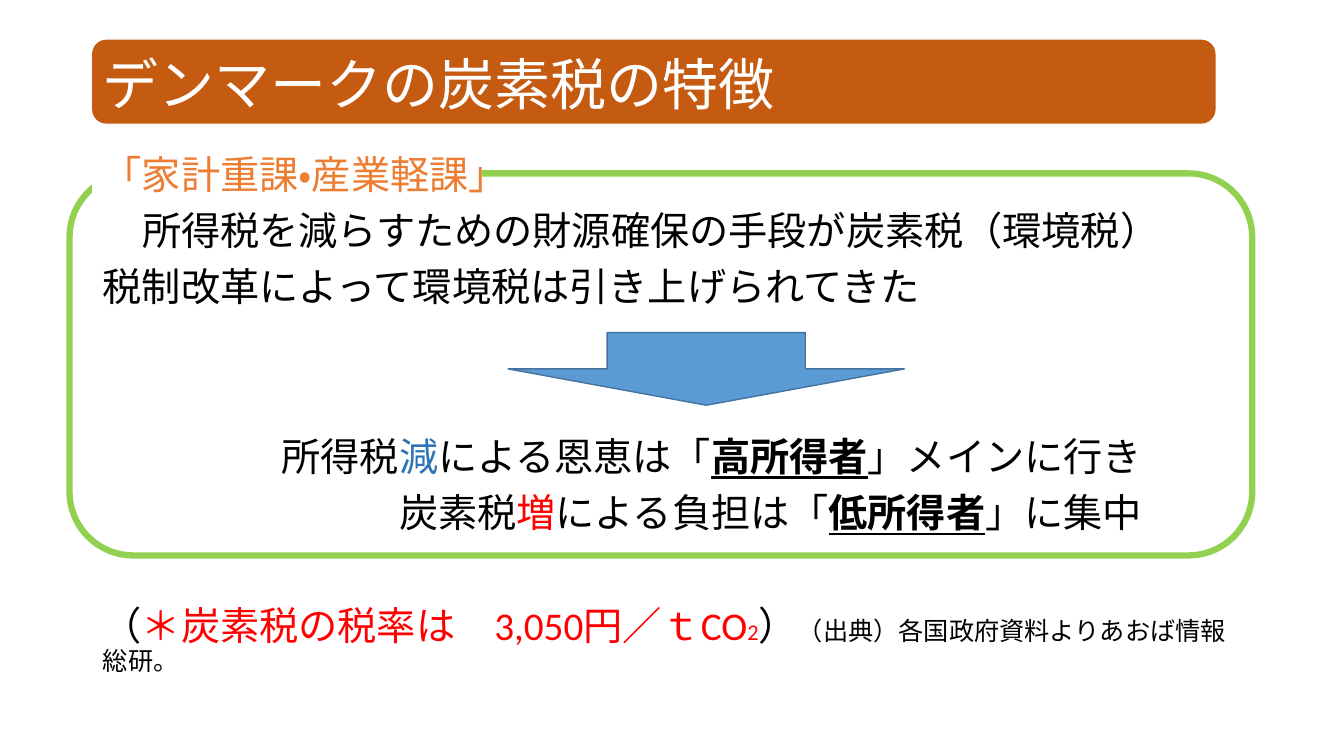
from dataclasses import dataclass

from lxml.etree import SubElement
from pptx import Presentation
from pptx.dml.color import RGBColor
from pptx.enum.lang import MSO_LANGUAGE_ID
from pptx.enum.shapes import MSO_SHAPE
from pptx.enum.text import MSO_ANCHOR, MSO_AUTO_SIZE, PP_ALIGN
from pptx.oxml.ns import qn
from pptx.util import Pt

EMU_PER_PX = 9144  # 100 px to the inch


@dataclass(frozen=True)
class Theme:
    font: str = "Calibri"
    title_size: int = 40
    body_size: int = 28
    source_size: int = 18
    subscript_size: int = 16
    white: str = "FFFFFF"
    black: str = "000000"
    title_bar: str = "C55A11"
    heading: str = "ED7D31"
    frame: str = "92D050"
    decrease: str = "2E75B6"
    increase: str = "FF0000"
    arrow: str = "5B9BD5"
    arrow_edge: str = "43739E"


@dataclass(frozen=True)
class Span:
    text: str
    color: str = Theme.black
    size: int = Theme.body_size
    strong: bool = False


@dataclass(frozen=True)
class Line:
    spans: tuple
    indent: int = 0  # in full-width characters
    before: int = 10  # in points
    align: PP_ALIGN = PP_ALIGN.LEFT


def px(length):
    return length * EMU_PER_PX


class SlideBuilder:
    def __init__(self, page, theme):
        self.page = page
        self.theme = theme

    def shape(self, preset, bounds, fill=None, line=None, width=1):
        box = self.page.shapes.add_shape(preset, *map(px, bounds))
        box.shadow.inherit = False
        if fill:
            box.fill.solid()
            box.fill.fore_color.rgb = RGBColor.from_string(fill)
        else:
            box.fill.background()
        box.line.color.rgb = RGBColor.from_string(line or fill)
        box.line.width = Pt(width)

    def placeholder(self, box, bounds, lines, anchor):
        """Place a template placeholder in front of the shapes drawn so far."""
        box.left, box.top, box.width, box.height = map(px, bounds)
        self.page.shapes._spTree.append(box._element)
        frame = box.text_frame
        frame.word_wrap = True
        frame.auto_size = MSO_AUTO_SIZE.NONE
        frame.vertical_anchor = anchor
        frame.margin_left = frame.margin_right = px(10)
        frame.margin_top = frame.margin_bottom = px(5)
        frame.text = "\n".join("" for _ in lines)
        for para, line in zip(frame.paragraphs, lines):
            self.paragraph(para, line)

    def paragraph(self, para, line):
        para.alignment = line.align
        para.line_spacing = 0.9
        para.space_before = Pt(line.before)
        para.space_after = Pt(0)
        properties = para._p.get_or_add_pPr()
        properties.set("marL", str(Pt(line.indent * self.theme.body_size)))
        properties.set("indent", "0")
        SubElement(properties, qn("a:buNone"))
        for span in line.spans:
            run = para.add_run()
            run.text = span.text
            font = run.font
            font.name = self.theme.font
            font.size = Pt(span.size)
            font.color.rgb = RGBColor.from_string(span.color)
            font.bold = font.underline = span.strong
            font.language_id = MSO_LANGUAGE_ID.JAPANESE


def main():
    theme = Theme()
    deck = Presentation()
    deck.slide_width, deck.slide_height = px(1333), px(750)
    page = deck.slides.add_slide(deck.slide_layouts[1])
    title, body = page.placeholders
    builder = SlideBuilder(page, theme)

    # Green frame, interrupted behind the heading
    builder.shape(MSO_SHAPE.ROUNDED_RECTANGLE, (69, 172, 1173, 379),
                  line=theme.frame, width=4.5)
    builder.shape(MSO_SHAPE.RECTANGLE, (92, 149, 385, 48), fill=theme.white)

    # Body: policy, its consequences, and the tax rate
    red = theme.increase
    lines = (
        Line((Span("「家計重課・産業軽課」", theme.heading),)),
        Line((Span("所得税を減らすための財源確保の手段が炭素税（環境税）"),), indent=1),
        Line((Span("税制改革によって環境税は引き上げられてきた"),)),
        Line((Span("所得税"), Span("減", theme.decrease), Span("による恩恵は「"),
              Span("高所得者", strong=True), Span("」メインに行き")),
             indent=2, before=91, align=PP_ALIGN.CENTER),
        Line((Span("炭素税"), Span("増", red), Span("による負担は「"),
              Span("低所得者", strong=True), Span("」に集中")),
             indent=5, align=PP_ALIGN.CENTER),
        Line((Span("（"), Span("＊炭素税の税率は　3,050円／ｔCO", red),
              Span("2", red, theme.subscript_size), Span("）"),
              Span("（出典）各国政府資料よりあおば情報総研。", size=theme.source_size)),
             before=50),
    )
    builder.placeholder(body, (92, 149, 1150, 526), lines, MSO_ANCHOR.TOP)

    # Title on its bar
    builder.shape(MSO_SHAPE.ROUNDED_RECTANGLE, (92, 40, 1113, 82), fill=theme.title_bar)
    heading = Span("デンマークの炭素税の特徴", theme.white, theme.title_size)
    builder.placeholder(title, (92, 40, 1150, 94), (Line((heading,), before=0),),
                        MSO_ANCHOR.MIDDLE)

    # Arrow from policy to consequences
    builder.shape(MSO_SHAPE.DOWN_ARROW, (504, 330, 393, 72),
                  fill=theme.arrow, line=theme.arrow_edge)

    deck.save("out.pptx")


if __name__ == "__main__":
    main()
